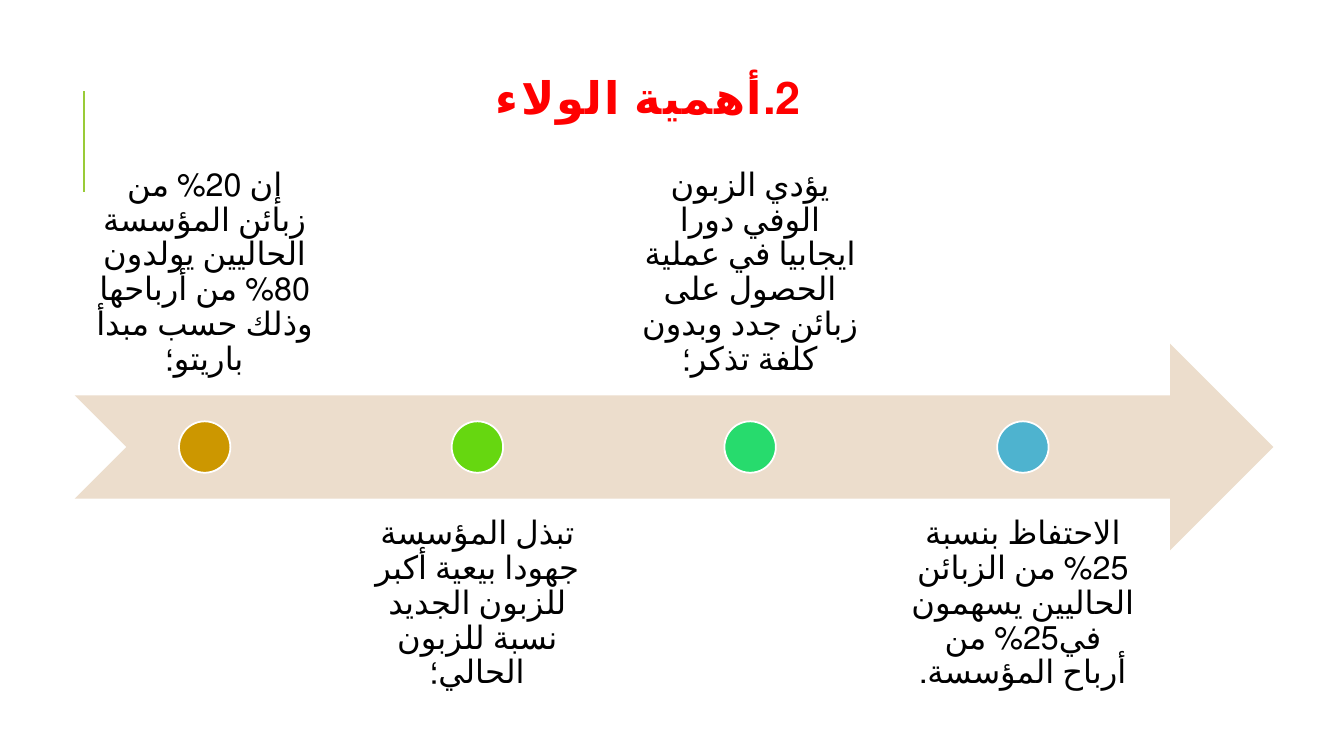
from dataclasses import dataclass
from lxml.etree import SubElement
from pptx import Presentation
from pptx.dml.color import RGBColor
from pptx.enum.lang import MSO_LANGUAGE_ID
from pptx.enum.shapes import MSO_CONNECTOR, MSO_SHAPE
from pptx.enum.text import MSO_ANCHOR, PP_ALIGN
from pptx.oxml.ns import qn
from pptx.util import Inches, Pt


@dataclass(frozen=True)
class Theme:
    font: str = "Calibri"
    title: str = "FF0000"
    ink: str = "000000"
    rule: str = "99CB38"
    arrow: str = "ECDDCC"
    ring: str = "FFFFFF"
    dots: tuple = ("CC9700", "66D710", "27DB6D", "4EB3CF")
    big: int = 32
    body: int = 23


def write(frame, text, *, font, size, color, bold=False, lead=0.9, track=0):
    para = frame.paragraphs[0]
    para.alignment = PP_ALIGN.CENTER
    para.line_spacing = lead
    para._p.get_or_add_pPr().set("rtl", "1")
    run = para.add_run()
    run.text = text
    run.font.name = font
    run.font.size = Pt(size)
    run.font.bold = bold
    run.font.color.rgb = RGBColor.from_string(color)
    run.font.language_id = MSO_LANGUAGE_ID.ARABIC_ALGERIA
    if track:
        run._r.get_or_add_rPr().set("spc", str(track * 100))


class Canvas:
    def __init__(self, slide, theme):
        self.slide = slide
        self.theme = theme

    def line(self, start, end, color, width):
        link = self.slide.shapes.add_connector(
            MSO_CONNECTOR.STRAIGHT, *map(Inches, start + end))
        link.line.color.rgb = RGBColor.from_string(color)
        link.line.width = Pt(width)
        SubElement(link._element.spPr, qn("a:effectLst"))

    def shape(self, kind, area, fill, edge=None):
        item = self.slide.shapes.add_shape(kind, *map(Inches, area))
        item.shadow.inherit = False
        item.fill.solid()
        item.fill.fore_color.rgb = RGBColor.from_string(fill)
        if edge:
            item.line.color.rgb = RGBColor.from_string(edge)
            item.line.width = Pt(1.25)
        else:
            item.line.fill.background()

    def text(self, area, words, anchor, pad=(0.1, 0.05), **style):
        frame = self.slide.shapes.add_textbox(*map(Inches, area)).text_frame
        frame.word_wrap = True
        frame.vertical_anchor = anchor
        frame.margin_left = frame.margin_right = Inches(pad[0])
        frame.margin_top = frame.margin_bottom = Inches(pad[1])
        write(frame, words, font=self.theme.font, **style)


POINTS = (
    "إن 20% من زبائن المؤسسة الحاليين يولدون 80% من أرباحها وذلك حسب مبدأ باريتو؛",
    "تبذل المؤسسة جهودا بيعية أكبر للزبون الجديد نسبة للزبون الحالي؛",
    "يؤدي الزبون الوفي دورا ايجابيا في عملية الحصول على زبائن جدد وبدون كلفة تذكر؛",
    "الاحتفاظ بنسبة 25% من الزبائن الحاليين يسهمون في25% من أرباح المؤسسة.",
)


def main():
    deck = Presentation()
    deck.slide_width = Inches(13.33)
    deck.slide_height = Inches(7.5)
    theme = Theme()
    page = Canvas(deck.slides.add_slide(deck.slide_layouts[6]), theme)

    page.line((0.83, 1.9), (0.83, 0.9), theme.rule, 1.5)
    page.text((1.12, 0.64, 10.63, 0.73), "2.أهمية الولاء", MSO_ANCHOR.MIDDLE,
              size=theme.big, color=theme.title, bold=True, lead=0.8, track=1)

    left, high, wide, step, dot = 0.74, 2.05, 2.58, 2.705, 0.51
    page.shape(MSO_SHAPE.NOTCHED_RIGHT_ARROW, (left, 3.41, 11.89, high),
               theme.arrow)
    for index, (words, color) in enumerate(zip(POINTS, theme.dots)):
        x = left + index * step
        below = index % 2
        page.text((x, 4.95 if below else 1.87, wide, high), words,
                  MSO_ANCHOR.TOP if below else MSO_ANCHOR.BOTTOM,
                  pad=(0.18, 0.18), size=theme.body, color=theme.ink)
        page.shape(MSO_SHAPE.OVAL, (x + (wide - dot) / 2, 4.18, dot, dot),
                   color, theme.ring)
    deck.save("out.pptx")


if __name__ == "__main__":
    main()
